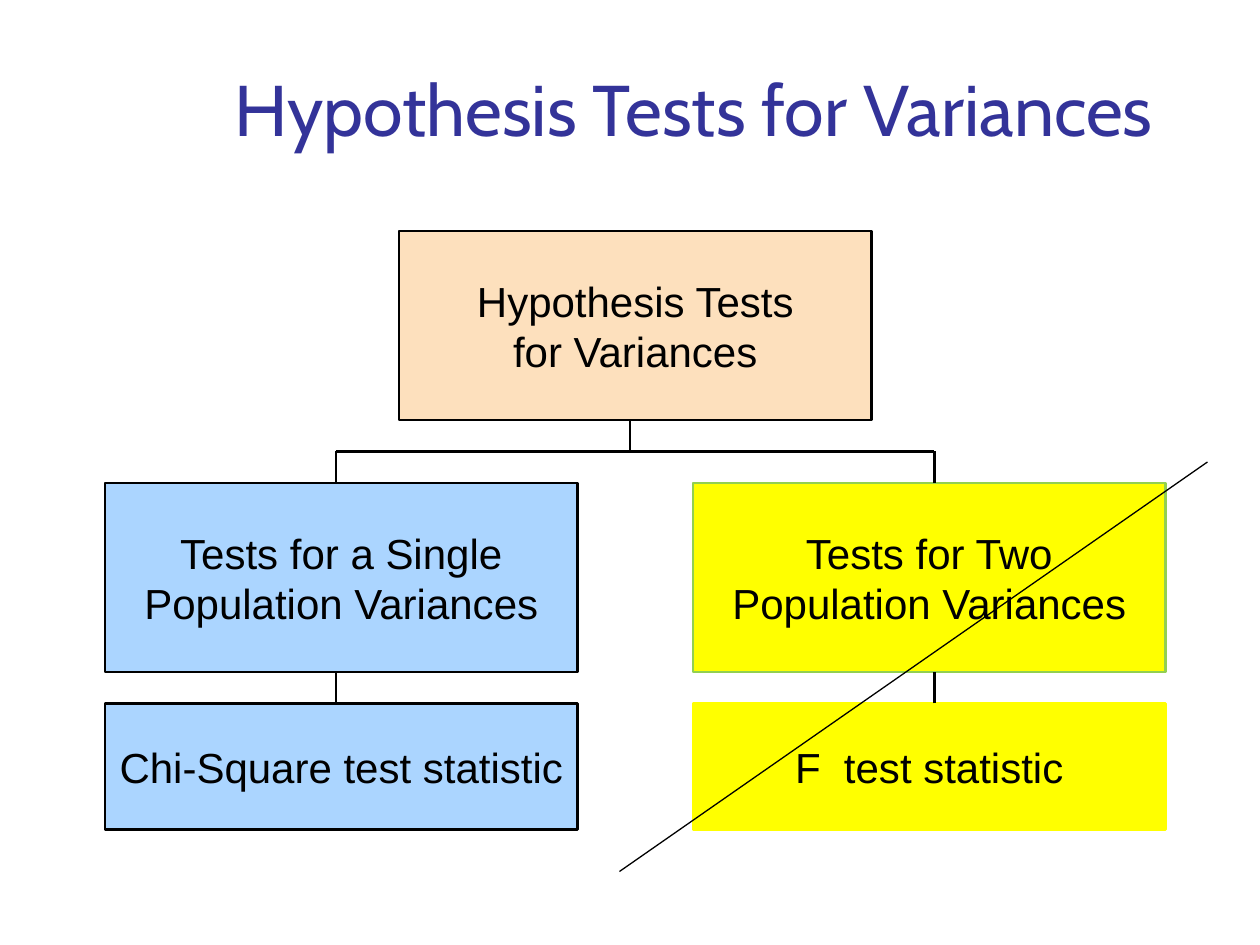
from lxml import etree
from pptx import Presentation
from pptx.dml.color import RGBColor
from pptx.enum.shapes import MSO_CONNECTOR, MSO_SHAPE
from pptx.enum.text import MSO_ANCHOR, PP_ALIGN
from pptx.oxml.ns import qn
from pptx.util import Inches, Pt

RECTANGLE = MSO_SHAPE.RECTANGLE
STRAIGHT = MSO_CONNECTOR.STRAIGHT
CENTER = PP_ALIGN.CENTER
MIDDLE, BOTTOM = MSO_ANCHOR.MIDDLE, MSO_ANCHOR.BOTTOM

BLACK = RGBColor(0x00, 0x00, 0x00)
INDIGO = RGBColor(0x33, 0x33, 0x99)
PEACH = RGBColor(0xFD, 0xE0, 0xBD)
SKY = RGBColor(0xAB, 0xD5, 0xFF)
YELLOW = RGBColor(0xFF, 0xFF, 0x00)
GREEN = RGBColor(0x92, 0xD0, 0x50)

# The slide is a grid of 120 columns and 90 rows, twelve to the inch.
COLUMNS, ROWS, PER_INCH = 120, 90, 12
BOX_WIDTH, TEST_HEIGHT, STATISTIC_HEIGHT = 45, 18, 12
GAP = 3

TITLE_FONT = {"name": "Cabin", "size": Pt(41)}
BOX_FONT = {"name": "Arial", "size": Pt(24)}


def grid(*counts):
    return [Inches(count / PER_INCH) for count in counts]


def write_text(frame, lines, font, color, anchor, wrap):
    frame.word_wrap = wrap
    frame.vertical_anchor = anchor
    for index, line in enumerate(lines):
        paragraph = frame.paragraphs[0] if index == 0 else frame.add_paragraph()
        paragraph.alignment = CENTER
        run = paragraph.add_run()
        run.text = line
        for name, value in font.items():
            setattr(run.font, name, value)
        run.font.color.rgb = color


def add_title(slide, box, text):
    shape = slide.shapes.add_textbox(*grid(*box))
    write_text(shape.text_frame, [text], TITLE_FONT, INDIGO, BOTTOM, True)


def add_box(slide, box, lines, fill, outline):
    shape = slide.shapes.add_shape(RECTANGLE, *grid(*box))
    shape.shadow.inherit = False
    shape.fill.solid()
    shape.fill.fore_color.rgb = fill
    shape.line.color.rgb = outline
    shape.line.width = Pt(1.5)
    write_text(shape.text_frame, lines, BOX_FONT, BLACK, MIDDLE, False)


def add_line(slide, start, end, width=1.5):
    line = slide.shapes.add_connector(STRAIGHT, *grid(*start, *end))
    line.line.color.rgb = BLACK
    line.line.width = Pt(width)
    properties = line._element.find(qn("p:spPr"))
    etree.SubElement(properties, qn("a:effectLst"))


def add_branch(slide, left, top, stem, test, statistic, fill, outlines):
    """Place a test box and its statistic, joined along the stem column."""
    bottom = top + TEST_HEIGHT
    add_box(slide, (left, top, BOX_WIDTH, TEST_HEIGHT), test, fill, outlines[0])
    add_box(slide, (left, bottom + GAP, BOX_WIDTH, STATISTIC_HEIGHT),
            [statistic], fill, outlines[1])
    add_line(slide, (stem, top), (stem, top - GAP))
    add_line(slide, (stem, bottom + GAP), (stem, bottom))


def add_tree(slide, left, top):
    root_bottom = top + TEST_HEIGHT
    rail = root_bottom + GAP
    branch_top = rail + GAP
    left_stem, root_stem, right_stem = left + 22, left + 50, left + 79

    add_box(slide, (left + 28, top, BOX_WIDTH, TEST_HEIGHT),
            ["Hypothesis Tests", "for Variances"], PEACH, BLACK)
    add_line(slide, (root_stem, rail), (root_stem, root_bottom))
    add_line(slide, (left_stem, rail), (right_stem, rail))
    add_branch(slide, left, branch_top, left_stem,
               ["Tests for a Single", "Population Variances"],
               "Chi-Square test statistic", SKY, (BLACK, BLACK))
    add_branch(slide, left + 56, branch_top, right_stem,
               ["Tests for Two", "Population Variances"],
               "F  test statistic", YELLOW, (GREEN, YELLOW))


def main():
    presentation = Presentation()
    presentation.slide_width, presentation.slide_height = grid(COLUMNS, ROWS)
    slide = presentation.slides.add_slide(presentation.slide_layouts[6])
    add_title(slide, (15, 5, 102.2, 10), "Hypothesis Tests for Variances")
    add_tree(slide, 10, 22)
    add_line(slide, (59, 83), (115, 44), width=0.75)
    presentation.save("out.pptx")


if __name__ == "__main__":
    main()
